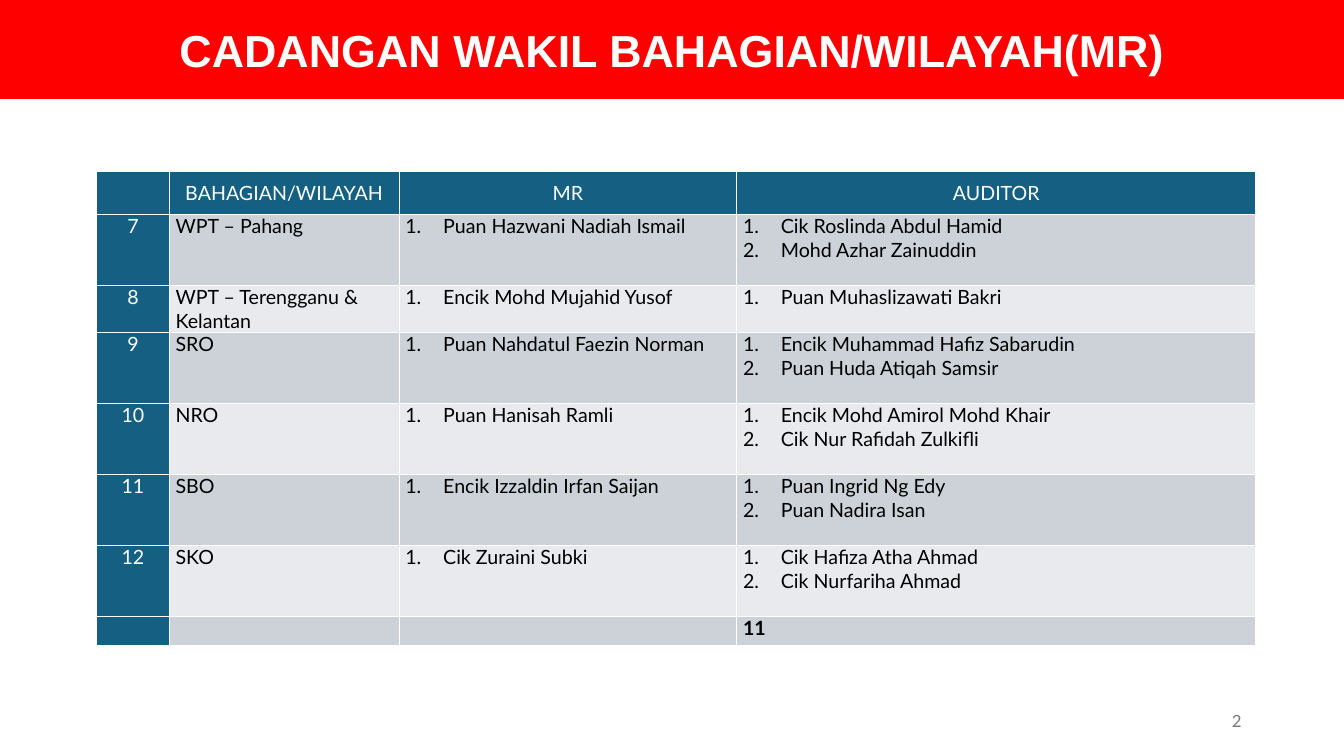
from pptx import Presentation
from pptx.dml.color import RGBColor
from pptx.enum.shapes import MSO_SHAPE as Shape
from pptx.enum.text import MSO_ANCHOR as Anchor, PP_ALIGN as Align
from pptx.oxml import parse_xml
from pptx.oxml.ns import nsdecls
from pptx.util import Pt

TITLE = "CADANGAN WAKIL BAHAGIAN/WILAYAH(MR)"
PAGE = "2"
HEADS = ["", "BAHAGIAN/WILAYAH", "MR", "AUDITOR"]
# number, region, MR names, auditor names, row height
REGIONS = [
    ("7", "WPT – Pahang", ["Puan Hazwani Nadiah Ismail"],
     ["Cik Roslinda Abdul Hamid", "Mohd Azhar Zainuddin"], 50.7),
    ("8", "WPT – Terengganu & Kelantan", ["Encik Mohd Mujahid Yusof"],
     ["Puan Muhaslizawati Bakri"], 33.6),
    ("9", "SRO", ["Puan Nahdatul Faezin Norman"],
     ["Encik Muhammad Hafiz Sabarudin", "Puan Huda Atiqah Samsir"], 50.7),
    ("10", "NRO", ["Puan Hanisah Ramli"],
     ["Encik Mohd Amirol Mohd Khair", "Cik Nur Rafidah Zulkifli"], 50.7),
    ("11", "SBO", ["Encik Izzaldin Irfan Saijan"],
     ["Puan Ingrid Ng Edy", "Puan Nadira Isan"], 50.7),
    ("12", "SKO", ["Cik Zuraini Subki"],
     ["Cik Hafiza Atha Ahmad", "Cik Nurfariha Ahmad"], 50.7),
]
TOTAL = "11"
WIDTHS = [51.8, 164.2, 241.2, 370.8]
HEAD_H, TOTAL_H = 30.7, 20.7
INDENT = Pt(27)

RED = RGBColor(0xFF, 0x00, 0x00)
WHITE = RGBColor(0xFF, 0xFF, 0xFF)
BLACK = RGBColor(0x00, 0x00, 0x00)
GREY = RGBColor(0x79, 0x79, 0x79)
TEAL = RGBColor(0x15, 0x60, 0x82)
BANDS = [RGBColor(0xCC, 0xD2, 0xD8), RGBColor(0xE8, 0xEA, 0xED)]


def style(para, size, color, face="Lato", bold=False, align=Align.LEFT):
    para.alignment = align
    font = para.font
    font.size, font.name, font.bold = Pt(size), face, bold
    font.color.rgb = color


def number(para):
    """Turn the paragraph into an item of a numbered list."""
    props = para._p.get_or_add_pPr()
    props.set("marL", str(INDENT))
    props.set("indent", str(-INDENT))
    props.append(parse_xml(
        f'<a:buAutoNum {nsdecls("a")} type="arabicPeriod"/>'))


def border(cell):
    props = cell._tc.get_or_add_tcPr()
    for i, side in enumerate(("lnL", "lnR", "lnT", "lnB")):
        props.insert(i, parse_xml(
            f'<a:{side} {nsdecls("a")} w="{Pt(1)}"><a:solidFill>'
            f'<a:srgbClr val="{WHITE}"/></a:solidFill></a:{side}>'))


def fill_cell(cell, text, fill, color, align=Align.LEFT, bold=False):
    """Write a string, or a list of names as numbered items."""
    cell.margin_left = cell.margin_right = Pt(4.5)
    cell.margin_top = cell.margin_bottom = 0
    cell.fill.solid()
    cell.fill.fore_color.rgb = fill
    border(cell)
    listed = isinstance(text, list)
    cell.text = "\n".join(text) if listed else text
    for para in cell.text_frame.paragraphs:
        if listed:
            number(para)
        style(para, 14, color, bold=bold, align=align)


def add_regions(slide):
    rows = [(*names, height) for *names, height in REGIONS]
    rows.append(("", "", "", TOTAL, TOTAL_H))
    heights = [HEAD_H] + [row[-1] for row in rows]
    table = slide.shapes.add_table(
        len(heights), len(WIDTHS), Pt(69.1), Pt(122.4),
        Pt(sum(WIDTHS)), Pt(sum(heights))).table
    table.first_row = table.horz_banding = False
    for col, width in zip(table.columns, WIDTHS):
        col.width = Pt(width)
    for row, height in zip(table.rows, heights):
        row.height = Pt(height)

    for c, head in enumerate(HEADS):
        cell = table.cell(0, c)
        fill_cell(cell, head, TEAL, WHITE, Align.CENTER)
        cell.vertical_anchor = Anchor.MIDDLE
    for r, (label, *texts, _) in enumerate(rows, 1):
        fill_cell(table.cell(r, 0), label, TEAL, WHITE, Align.CENTER)
        for c, text in enumerate(texts, 1):
            fill_cell(table.cell(r, c), text, BANDS[(r - 1) % 2], BLACK,
                      bold=text == TOTAL)


def main():
    deck = Presentation()
    deck.slide_width, deck.slide_height = Pt(960), Pt(540)
    slide = deck.slides.add_slide(deck.slide_layouts[6])

    page = slide.shapes.add_textbox(Pt(678), Pt(500.5), Pt(216), Pt(28.8))
    page.text_frame.word_wrap = True
    page.text_frame.vertical_anchor = Anchor.MIDDLE
    page.text_frame.text = PAGE
    style(page.text_frame.paragraphs[0], 12, GREY, align=Align.RIGHT)

    bar = slide.shapes.add_shape(Shape.RECTANGLE, 0, 0, Pt(960), Pt(70.6))
    bar.shadow.inherit = False
    bar.fill.solid()
    bar.fill.fore_color.rgb = RED
    bar.line.fill.background()
    bar.text_frame.vertical_anchor = Anchor.MIDDLE
    bar.text_frame.text = TITLE
    style(bar.text_frame.paragraphs[0], 32, WHITE, "Arial", True, Align.CENTER)

    add_regions(slide)
    deck.save("out.pptx")


if __name__ == "__main__":
    main()
